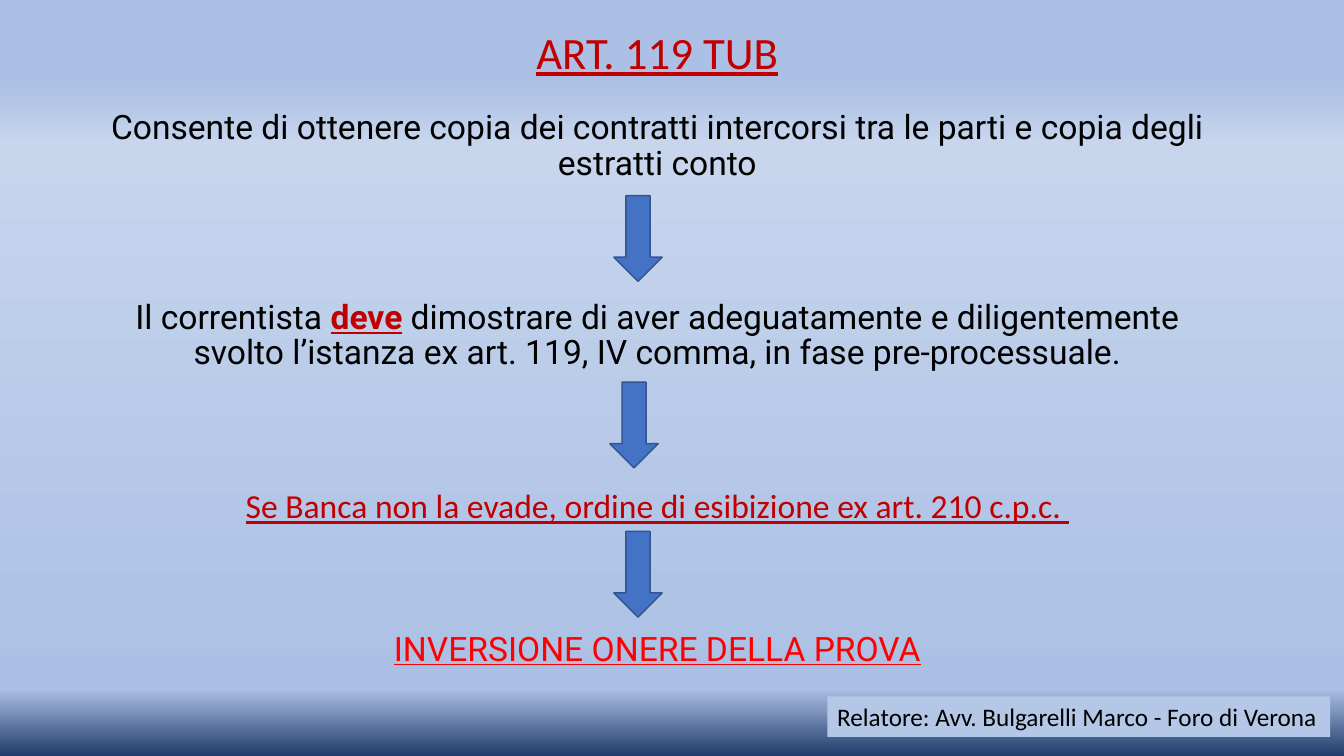
"""Slide on art. 119 TUB: three steps leading to the reversed burden of proof."""
from pptx import Presentation, util as u
from pptx.dml.color import RGBColor
from pptx.enum import shapes, text
from pptx.oxml import parse_xml
from pptx.oxml.ns import nsdecls, qn

BLACK = RGBColor(0x00, 0x00, 0x00)
DARK_RED = RGBColor(0xC0, 0x00, 0x00)
RED = RGBColor(0xFF, 0x00, 0x00)
ARROW_BLUE = RGBColor(0x44, 0x72, 0xC4)
ARROW_EDGE = RGBColor(0x32, 0x54, 0x91)
LABEL_BLUE = RGBColor(0xB4, 0xC7, 0xE7)
SKY = RGBColor(0xAB, 0xC0, 0xE4)
PALE_SKY = RGBColor(0xC7, 0xD5, 0xED)
NAVY = RGBColor(0x22, 0x3D, 0x6C)

BACKDROP = [(11, SKY), (19, PALE_SKY), (91, SKY), (100, NAVY)]
PLAIN = dict(name="Roboto", size=u.Pt(24), color=BLACK)
STRESSED = dict(PLAIN, color=DARK_RED, bold=True, underline=True)
ORDER = dict(PLAIN, name="Calibri", color=DARK_RED, underline=True)
OUTCOME = dict(PLAIN, color=RED, underline=True)
HEADING = dict(ORDER, size=u.Pt(32))
SPEAKER = dict(PLAIN, name="Calibri", size=u.Pt(18))

STEPS = [
    (0, [("Consente di ottenere copia dei contratti intercorsi tra le parti "
          "e copia degli estratti conto", PLAIN)]),
    (85.5, [("Il correntista ", PLAIN), ("deve", STRESSED),
            (" dimostrare di aver adeguatamente e diligentemente svolto l’istanza "
             "ex art. 119, IV comma, in fase pre-processuale.", PLAIN)]),
    (85, [("Se Banca non la evade, ordine di esibizione ex art. 210 c.p.c. ", ORDER)]),
    (76.5, [("INVERSIONE ONERE DELLA PROVA", OUTCOME)]),
]
ARROWS = [(15.47, 4.93), (15.37, 9.63), (15.47, 13.39)]


class SlideBuilder:
    """Holds the current slide and its shared text style."""

    def __init__(self, deck):
        """Add a title-only slide to the deck."""
        self.slide = deck.slides.add_slide(deck.slide_layouts[5])

    def background(self, stops):
        """Paint a vertical gradient behind the slide."""
        fill = self.slide.background.fill
        fill.gradient()
        fill.gradient_angle = 270
        stop_list = next(self.slide.element.iter(qn("a:gsLst")))
        for stop in list(stop_list):
            stop_list.remove(stop)
        for percent, color in stops:
            stop_list.append(parse_xml(
                f'<a:gs {nsdecls("a")} pos="{percent * 1000}">'
                f'<a:srgbClr val="{color}"/></a:gs>'))

    def prepare(self, frame, inset, anchor):
        """Set wrapping, anchor and side insets of a text frame."""
        settings = dict(word_wrap=True, auto_size=text.MSO_AUTO_SIZE.NONE,
                        vertical_anchor=anchor, margin_left=inset, margin_right=inset,
                        margin_top=0, margin_bottom=0)
        for key, value in settings.items():
            setattr(frame, key, value)

    def fill_paragraph(self, paragraph, runs, **layout):
        """Fill a paragraph with formatted runs."""
        for key, value in layout.items():
            setattr(paragraph, key, value)
        for words, style in runs:
            run = paragraph.add_run()
            run.text = words
            for key, value in style.items():
                if key == "color":
                    run.font.color.rgb = value
                else:
                    setattr(run.font, key, value)

    def title(self, words, box):
        """Place and format the title placeholder."""
        heading = self.slide.shapes.title
        heading.left, heading.top, heading.width, heading.height = map(u.Cm, box)
        self.prepare(heading.text_frame, 0, text.MSO_ANCHOR.TOP)
        self.fill_paragraph(heading.text_frame.paragraphs[0], [(words, HEADING)],
                            alignment=text.PP_ALIGN.CENTER, line_spacing=0.7)

    def steps(self, steps, box):
        """Set the centred reasoning, leaving gaps for the arrows."""
        frame = self.slide.shapes.add_textbox(*map(u.Cm, box)).text_frame
        self.prepare(frame, 0, text.MSO_ANCHOR.TOP)
        for index, (gap, runs) in enumerate(steps):
            paragraph = frame.add_paragraph() if index else frame.paragraphs[0]
            self.fill_paragraph(paragraph, runs, alignment=text.PP_ALIGN.CENTER,
                                line_spacing=0.87, space_before=u.Pt(gap))

    def arrow(self, left, top):
        """Draw one downward block arrow."""
        arrow = self.slide.shapes.add_shape(
            shapes.MSO_SHAPE.DOWN_ARROW, *map(u.Cm, (left, top, 1.22, 2.16)))
        arrow.shadow.inherit = False
        arrow.fill.solid()
        arrow.fill.fore_color.rgb = ARROW_BLUE
        arrow.line.color.rgb = ARROW_EDGE
        arrow.line.width = u.Pt(1)

    def label(self, words, box):
        """Draw the filled speaker label."""
        label = self.slide.shapes.add_textbox(*map(u.Cm, box))
        label.fill.solid()
        label.fill.fore_color.rgb = LABEL_BLUE
        self.prepare(label.text_frame, u.Cm(0.25), text.MSO_ANCHOR.MIDDLE)
        self.fill_paragraph(label.text_frame.paragraphs[0], [(words, SPEAKER)],
                            alignment=text.PP_ALIGN.LEFT)


def main():
    """Build and save the slide."""
    deck = Presentation()
    deck.slide_width, deck.slide_height = u.Cm(33.87), u.Cm(19.05)
    builder = SlideBuilder(deck)
    builder.background(BACKDROP)
    builder.title("ART. 119 TUB", (2.67, 0.99, 27.79, 1.3))
    builder.steps(STEPS, (2.67, 2.82, 27.79, 14.3))
    for left, top in ARROWS:
        builder.arrow(left, top)
    builder.label("Relatore: Avv. Bulgarelli Marco - Foro di Verona",
                  (20.85, 17.55, 12.67, 1.02))
    deck.save("out.pptx")


if __name__ == "__main__":
    main()
